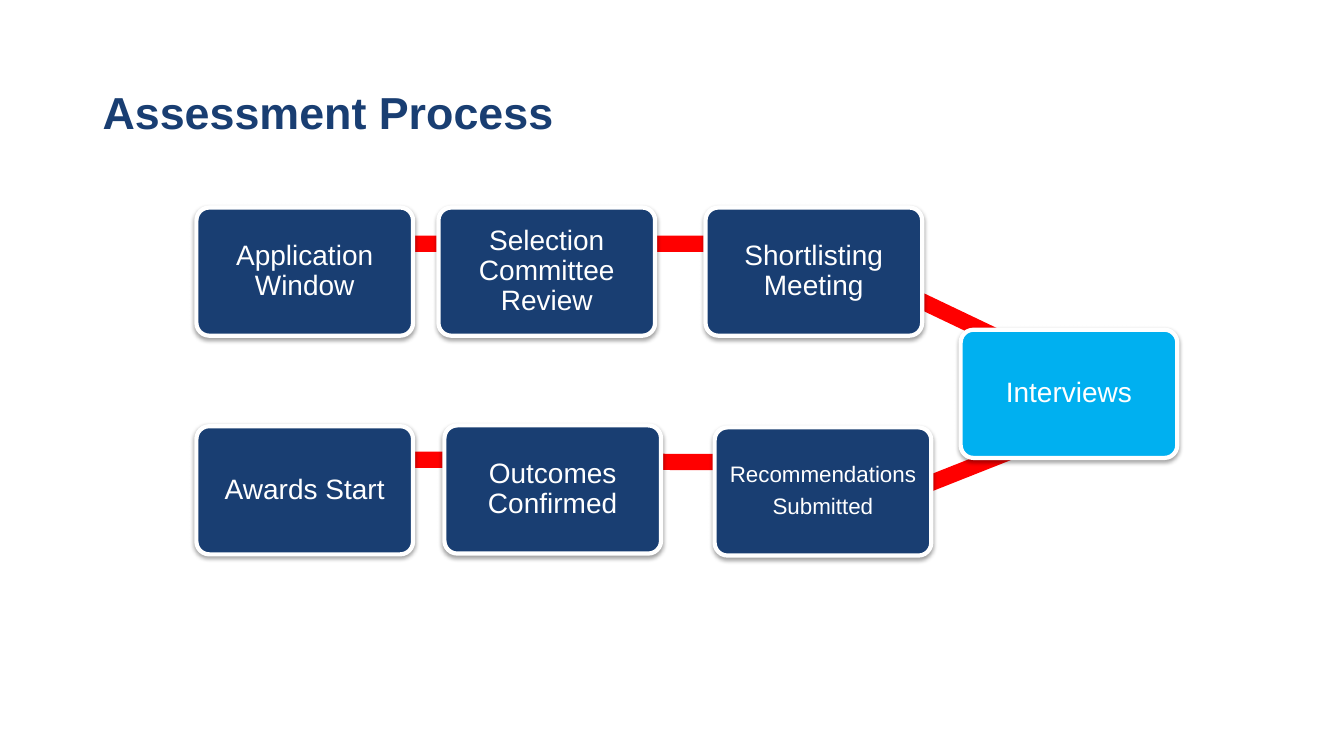
from lxml.etree import SubElement
from pptx import Presentation
from pptx.dml.color import RGBColor
from pptx.enum.shapes import MSO_SHAPE
from pptx.enum.text import MSO_ANCHOR, PP_ALIGN
from pptx.oxml.ns import qn
from pptx.util import Cm, Pt

COLORS = {"navy": "193E72", "sky": "00B0F0", "red": "FF0000", "white": "FFFFFF", "shadow": "000000"}


def color(name):
    return RGBColor.from_string(COLORS[name])


def add_soft_shadow(shape):
    shape.shadow.inherit = False
    effects = shape.element.spPr.find(qn("a:effectLst"))
    outer = SubElement(effects, qn("a:outerShdw"), blurRad=str(Pt(3.1)), dist=str(Pt(1.6)),
                       dir="5400000", rotWithShape="0")
    tint = SubElement(outer, qn("a:srgbClr"), val=COLORS["shadow"])
    SubElement(tint, qn("a:alpha"), val="37000")


presentation = Presentation()
presentation.slide_width, presentation.slide_height = Cm(33.87), Cm(19.05)
slide = presentation.slides.add_slide(presentation.slide_layouts[5])

# Title
title = slide.shapes.title
title.left, title.top, title.width, title.height = Cm(2.33), Cm(1.68), Cm(29.21), Cm(2.42)
title.text_frame.text = "Assessment Process"
title.text_frame.vertical_anchor = MSO_ANCHOR.MIDDLE
heading = title.text_frame.paragraphs[0]
heading.alignment = PP_ALIGN.LEFT
heading.line_spacing = 0.9
heading.font.name, heading.font.size, heading.font.bold = "Arial", Pt(32), True
heading.font.color.rgb = color("navy")

# Red bars linking the steps: left, top, width, rotation
links = [
    (6.3, 5.94, 6.1, 0),
    (12.42, 5.94, 6.71, 0),
    (19, 7.06, 7.09, 25.5),
    (20.65, 11.76, 6.65, 158.4),
    (12.55, 11.43, 6.81, 180.2),
    (6.17, 11.38, 6.25, 179.9),
]
for left, top, width, rotation in links:
    link = slide.shapes.add_shape(MSO_SHAPE.RECTANGLE, Cm(left), Cm(top), Cm(width), Cm(0.41))
    link.rotation = rotation
    link.fill.solid()
    link.fill.fore_color.rgb = color("red")
    link.line.fill.background()
    link.shadow.inherit = False

# Steps in process order: text, left, top, fill, text size
steps = [
    ("Application Window", 4.95, 5.23, "navy", 20),
    ("Selection Committee Review", 11.05, 5.23, "navy", 20),
    ("Shortlisting Meeting", 17.78, 5.23, "navy", 20),
    ("Interviews", 24.21, 8.31, "sky", 20),
    ("Recommendations\nSubmitted", 18.01, 10.77, "navy", 16),
    ("Outcomes Confirmed", 11.2, 10.72, "navy", 20),
    ("Awards Start", 4.95, 10.74, "navy", 20),
]
for text, left, top, fill, size in steps:
    step = slide.shapes.add_shape(MSO_SHAPE.ROUNDED_RECTANGLE, Cm(left), Cm(top), Cm(5.46), Cm(3.23))
    step.adjustments[0] = 0.1
    step.fill.solid()
    step.fill.fore_color.rgb = color(fill)
    step.line.color.rgb = color("white")
    step.line.width = Pt(3)
    add_soft_shadow(step)
    frame = step.text_frame
    frame.text = text
    frame.word_wrap = True
    frame.vertical_anchor = MSO_ANCHOR.MIDDLE
    frame.margin_left = frame.margin_right = frame.margin_top = frame.margin_bottom = Cm(0.19)
    for number, paragraph in enumerate(frame.paragraphs):
        paragraph.alignment = PP_ALIGN.CENTER
        paragraph.line_spacing = 0.9
        paragraph.space_before = Pt(5.6 if number else 0)
        paragraph.font.name, paragraph.font.size = "Arial", Pt(size)
        paragraph.font.color.rgb = color("white")

presentation.save("out.pptx")
